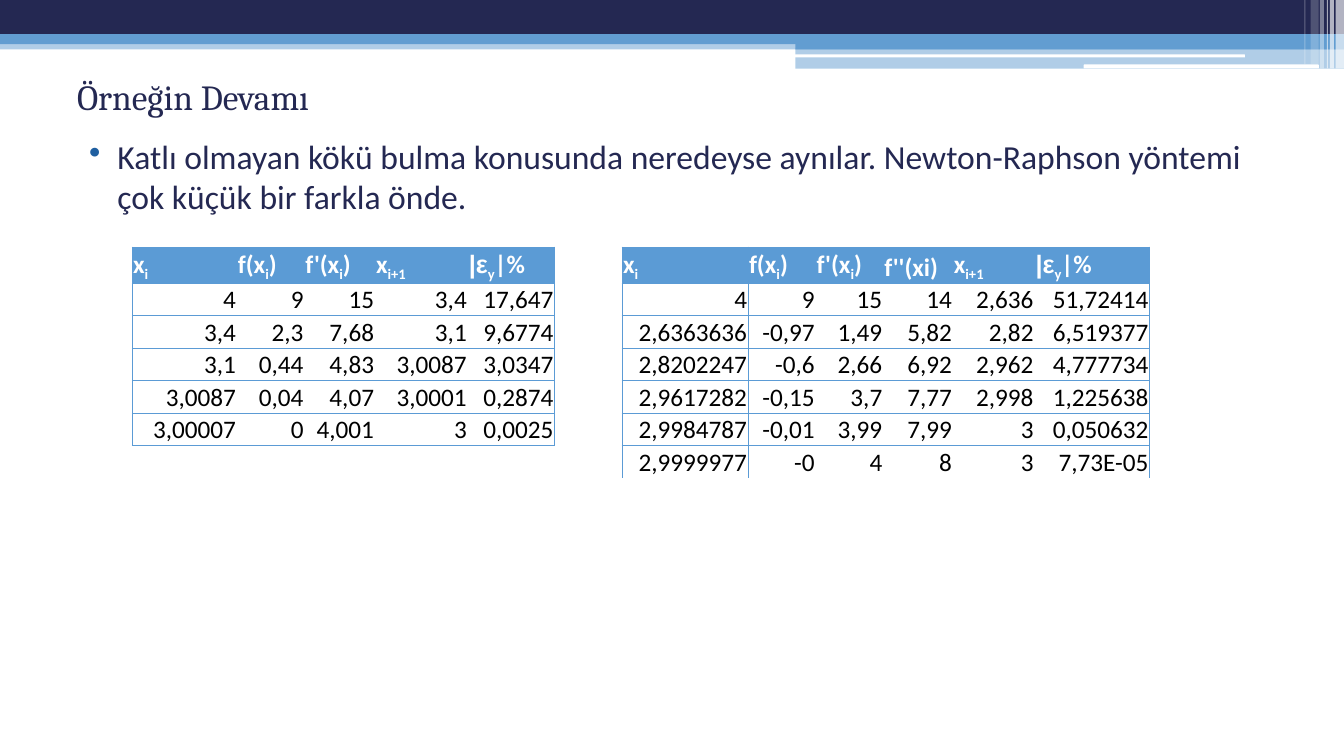
from typing import NamedTuple

from lxml import etree
from pptx import Presentation
from pptx import util as u
from pptx.dml.color import RGBColor
from pptx.enum import shapes, text
from pptx.oxml import ns

NAVY, BLUE, WHITE, BLACK = "242852", "629DD1", "FFFFFF", "000000"
TABLE_BLUE, BULLET_BLUE = "5B9BD5", "1F5FA0"
NO_STYLE = "{2D5ABB26-0587-4C30-8999-92F81FD0307C}"
WIDTH, HEIGHT = u.Inches(13.33), u.Inches(7.5)


class Box(NamedTuple):
    """Left, top, width and height in percent of the slide's size."""
    x: float
    y: float
    w: float
    h: float

    def emu(self) -> tuple[int, int, int, int]:
        return across(self.x), down(self.y), across(self.w), down(self.h)


class Bar(NamedTuple):
    box: Box
    color: str
    opacity: int = 100
    kind: shapes.MSO_SHAPE = shapes.MSO_SHAPE.RECTANGLE


ROUNDED = shapes.MSO_SHAPE.ROUNDED_RECTANGLE
BARS = [
    Bar(Box(0, 5.33, 100, 1.2), BLUE, 50),
    Bar(Box(0, 0, 100, 4.53), NAVY),
    Bar(Box(0, 4.53, 100, 1.33), BLUE),
    Bar(Box(59.18, 5.2, 40.82, 1.33), BLUE),
    Bar(Box(59.18, 6.4, 40.82, 2.67), BLUE, 50),
    Bar(Box(59.1, 7.2, 33.53, 0.4), WHITE, 100, ROUNDED),
    Bar(Box(80.63, 8.53, 17.5, 0.53), WHITE, 100, ROUNDED),
    Bar(Box(99.38, 0, 0.62, 9.07), WHITE, 65),
    Bar(Box(98.95, 0, 0.3, 9.07), WHITE, 65),
    Bar(Box(98.72, 0, 0.08, 9.07), WHITE, 60),
    Bar(Box(98.2, 0, 0.3, 9.07), WHITE, 40),
    Bar(Box(97.52, 0, 0.6, 8.53), WHITE, 20),
    Bar(Box(97.05, 0, 0.08, 8.53), WHITE, 30),
]

# Text between underscores is subscript.
NEWTON = [
    ["x_i_", "f(x_i_)", "f'(x_i_)", "x_i+1_", "|ε_y_|%"],
    ["4", "9", "15", "3,4", "17,647"],
    ["3,4", "2,3", "7,68", "3,1", "9,6774"],
    ["3,1", "0,44", "4,83", "3,0087", "3,0347"],
    ["3,0087", "0,04", "4,07", "3,0001", "0,2874"],
    ["3,00007", "0", "4,001", "3", "0,0025"],
    [""] * 5,
]
MODIFIED = [
    ["x_i_", "f(x_i_)", "f'(x_i_)", "f''(xi)", "x_i+1_", "|ε_y_|%"],
    ["4", "9", "15", "14", "2,636", "51,72414"],
    ["2,6363636", "-0,97", "1,49", "5,82", "2,82", "6,519377"],
    ["2,8202247", "-0,6", "2,66", "6,92", "2,962", "4,777734"],
    ["2,9617282", "-0,15", "3,7", "7,77", "2,998", "1,225638"],
    ["2,9984787", "-0,01", "3,99", "7,99", "3", "0,050632"],
    ["2,9999977", "-0", "4", "8", "3", "7,73E-05"],
]
ROWS = [left + [""] + right for left, right in zip(NEWTON, MODIFIED)]
COL_SHARES = [7.8, 5.03, 5.25, 6.9, 6.45, 5.03, 9.38, 5.03, 5.03, 5.18, 6.08, 8.55]
HEADER_SHARE, ROW_SHARE = 4.8, 4.29
GAP = len(NEWTON[0])
LAST_ROW, LAST_COL = len(ROWS) - 1, len(COL_SHARES) - 1


def across(percent: float) -> int:
    return round(WIDTH * percent / 100)


def down(percent: float) -> int:
    return round(HEIGHT * percent / 100)


def rgb(color: str) -> RGBColor:
    return RGBColor.from_string(color)


def add_xml(parent, tag: str, **attrs: str):
    return etree.SubElement(parent, ns.qn(tag), attrs)


def set_font(font, name: str, size: float, color: str, bold: bool = False) -> None:
    font.name, font.size, font.bold = name, u.Pt(size), bold
    font.color.rgb = rgb(color)


def add_bar(slide, bar: Bar) -> None:
    sp = slide.shapes.add_shape(bar.kind, *bar.box.emu())
    sp.shadow.inherit = False
    sp.line.fill.background()
    sp.fill.solid()
    sp.fill.fore_color.rgb = rgb(bar.color)
    if bar.opacity < 100:
        clr = sp.fill._xPr.find(".//" + ns.qn("a:srgbClr"))
        add_xml(clr, "a:alpha", val=str(bar.opacity * 1000))


def add_text(slide, box: Box, words: str, font: str, size: float):
    """Add a wrapped text box and return its paragraph."""
    tf = slide.shapes.add_textbox(*box.emu()).text_frame
    tf.word_wrap = True
    p = tf.paragraphs[0]
    p.text = words
    set_font(p.font, font, size, NAVY)
    return p, tf


def add_bullet(p) -> None:
    p.space_before = u.Pt(3)
    pPr = p._p.get_or_add_pPr()
    pPr.set("marL", str(u.Inches(0.4)))
    pPr.set("indent", str(u.Inches(-0.28)))
    bullet = [etree.Element(ns.qn("a:buClr")), etree.Element(ns.qn("a:buChar"), char="•")]
    add_xml(bullet[0], "a:srgbClr", val=BULLET_BLUE)
    for el in bullet:
        pPr.find(ns.qn("a:defRPr")).addprevious(el)


def ruled_sides(row: int, col: int) -> str:
    """Sides of a cell that carry a line, in the order L, R, T, B."""
    if col == GAP:
        return "LR" if row < LAST_ROW else "R"
    if col < GAP and row == LAST_ROW:
        return "T"
    left = "L" if col in (0, GAP + 1) else ""
    right = "R" if col in (GAP - 1, LAST_COL) else ""
    return left + right + ("TB" if row < LAST_ROW else "T")


def fill_cell(cell, row: int, col: int) -> None:
    words, header = ROWS[row][col], row == 0
    for side in ruled_sides(row, col):
        ln = add_xml(cell._tc.get_or_add_tcPr(), f"a:ln{side}", w=str(u.Pt(0.5)))
        add_xml(add_xml(ln, "a:solidFill"), "a:srgbClr", val=TABLE_BLUE)
    if header and words:
        cell.fill.solid()
        cell.fill.fore_color.rgb = rgb(TABLE_BLUE)
    else:
        cell.fill.background()
    cell.margin_left = cell.margin_right = cell.margin_top = u.Inches(0.01)
    cell.margin_bottom = 0
    cell.vertical_anchor = text.MSO_ANCHOR.BOTTOM
    p = cell.text_frame.paragraphs[0]
    p.alignment = text.PP_ALIGN.LEFT if header else text.PP_ALIGN.RIGHT
    set_font(p.font, "Calibri", 18, WHITE if header else BLACK, header)
    for i, part in enumerate(words.split("_")):
        if not part:
            continue
        r = p.add_run()
        r.text = part
        if i % 2:
            r._r.get_or_add_rPr().set("baseline", "-25000")
        if "ε" in part:
            r.font.name = "Arial"


def add_iterations(slide) -> None:
    box = Box(9.83, 32.67, sum(COL_SHARES), HEADER_SHARE + ROW_SHARE * LAST_ROW)
    table = slide.shapes.add_table(len(ROWS), len(COL_SHARES), *box.emu()).table
    table.first_row = table.horz_banding = False
    table._tbl.tblPr.find(ns.qn("a:tableStyleId")).text = NO_STYLE
    for column, share in zip(table.columns, COL_SHARES):
        column.width = across(share)
    for i, row in enumerate(table.rows):
        row.height = down(ROW_SHARE if i else HEADER_SHARE)
        for j, cell in enumerate(row.cells):
            fill_cell(cell, i, j)


def main() -> None:
    prs = Presentation()
    prs.slide_width, prs.slide_height = WIDTH, HEIGHT
    slide = prs.slides.add_slide(prs.slide_layouts[6])
    for bar in BARS:
        add_bar(slide, bar)
    _, tf = add_text(slide, Box(5, 9.07, 90, 7.33), "Örneğin Devamı", "Cambria", 25.2)
    tf.vertical_anchor = text.MSO_ANCHOR.MIDDLE
    p, _ = add_text(slide, Box(5, 17.33, 90, 78.53),
                    "Katlı olmayan kökü bulma konusunda neredeyse aynılar. "
                    "Newton-Raphson yöntemi çok küçük bir farkla önde.", "Calibri", 24)
    add_bullet(p)
    add_iterations(slide)
    prs.save("out.pptx")


if __name__ == "__main__":
    main()
